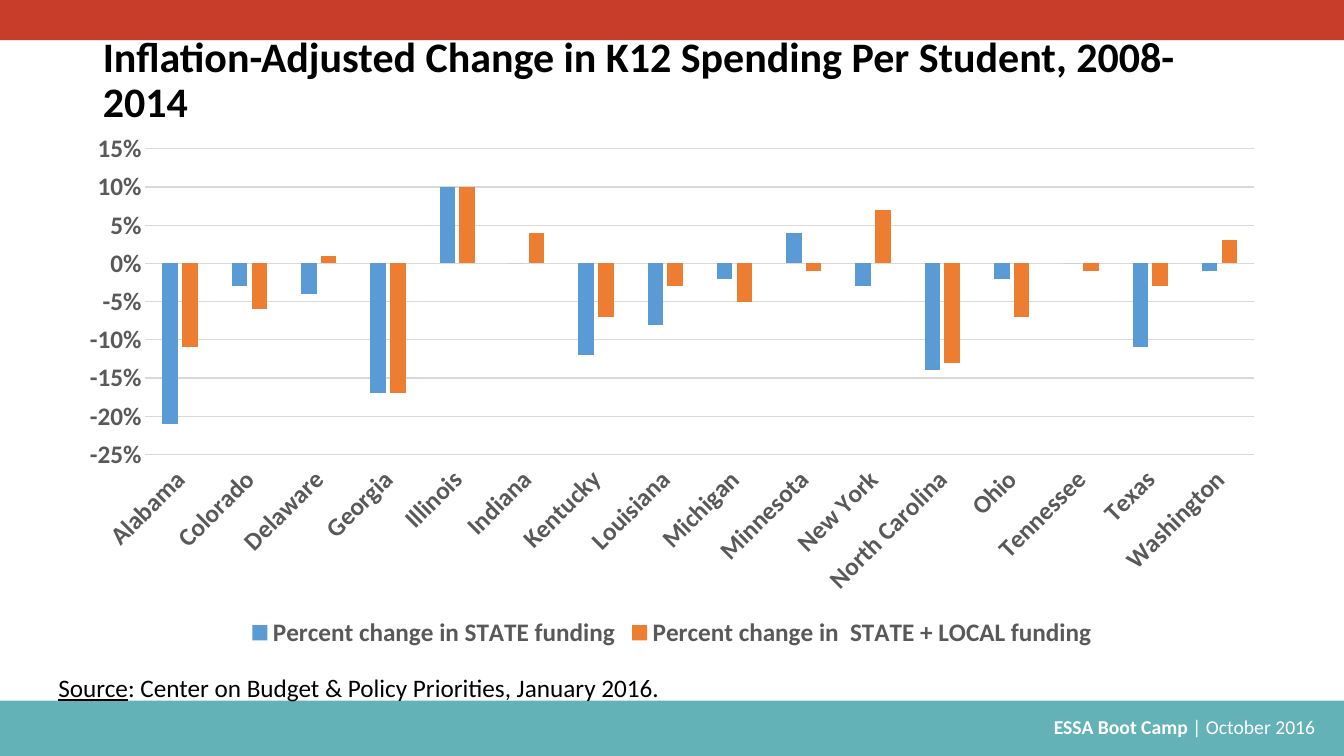
from pptx import Presentation
from pptx.chart.data import CategoryChartData
from pptx.dml.color import RGBColor
from pptx.enum.chart import XL_CHART_TYPE, XL_LEGEND_POSITION, XL_TICK_LABEL_POSITION, XL_TICK_MARK
from pptx.enum.shapes import MSO_SHAPE
from pptx.enum.text import MSO_ANCHOR, MSO_AUTO_SIZE, PP_ALIGN
from pptx.util import Inches, Pt

RED = RGBColor(0xC8, 0x3C, 0x2A)
TEAL = RGBColor(0x63, 0xB2, 0xB8)
BLUE = RGBColor(0x5B, 0x9B, 0xD5)
ORANGE = RGBColor(0xED, 0x7D, 0x31)
GRAY = RGBColor(0x59, 0x59, 0x59)
GRID = RGBColor(0xD9, 0xD9, 0xD9)
BLACK = RGBColor(0, 0, 0)
WHITE = RGBColor(0xFF, 0xFF, 0xFF)

prs = Presentation()
prs.slide_width, prs.slide_height = Inches(13.33), Inches(7.5)
s = prs.slides.add_slide(prs.slide_layouts[5])


def share(x, y, w, h):
    """Turn percentages of the slide's size into lengths."""
    W, H = prs.slide_width, prs.slide_height
    return int(W * x / 100), int(H * y / 100), int(W * w / 100), int(H * h / 100)


def style(font, size, color, bold=None):
    font.name, font.size, font.bold = "Calibri", Pt(size), bold
    font.color.rgb = color


# Bands along the bottom and top edges
for y, h, color in [(92.67, 7.33, TEAL), (0, 5.33, RED)]:
    sp = s.shapes.add_shape(MSO_SHAPE.RECTANGLE, *share(0, y, 100, h))
    sp.shadow.inherit = False
    sp.fill.solid()
    sp.fill.fore_color.rgb = color
    sp.line.fill.background()

# Title
title = s.shapes.title
title.left, title.top, title.width, title.height = share(6.9, 5.33, 86.27, 10.93)
tf = title.text_frame
tf.text = "Inflation-Adjusted Change in K12 Spending Per Student, 2008-2014"
tf.word_wrap, tf.auto_size = True, MSO_AUTO_SIZE.NONE
tf.vertical_anchor = MSO_ANCHOR.MIDDLE
p = tf.paragraphs[0]
p.alignment, p.line_spacing = PP_ALIGN.LEFT, 0.9
style(p.font, 30, BLACK, True)

# Chart data: state, state funding, state + local funding
spending = [
    ("Alabama", -0.21, -0.11), ("Colorado", -0.03, -0.06),
    ("Delaware", -0.04, 0.01), ("Georgia", -0.17, -0.17),
    ("Illinois", 0.1, 0.1), ("Indiana", 0, 0.04),
    ("Kentucky", -0.12, -0.07), ("Louisiana", -0.08, -0.03),
    ("Michigan", -0.02, -0.05), ("Minnesota", 0.04, -0.01),
    ("New York", -0.03, 0.07), ("North Carolina", -0.14, -0.13),
    ("Ohio", -0.02, -0.07), ("Tennessee", 0, -0.01),
    ("Texas", -0.11, -0.03), ("Washington", -0.01, 0.03),
]
states, state_funding, total_funding = zip(*spending)
data = CategoryChartData(number_format="0%")
data.categories = states
data.add_series("Percent change in STATE funding", state_funding)
data.add_series("Percent change in  STATE + LOCAL funding", total_funding)

# Chart
chart = s.shapes.add_chart(
    XL_CHART_TYPE.COLUMN_CLUSTERED, *share(4.88, 16.27, 90.25, 70.13), data).chart
style(chart.font, 10, BLACK)
chart.has_title = False
plot = chart.plots[0]
plot.gap_width, plot.overlap, plot.vary_by_categories = 219, -27, False
for series, color in zip(plot.series, (BLUE, ORANGE)):
    series.invert_if_negative = False
    series.format.fill.solid()
    series.format.fill.fore_color.rgb = color

# Axes
cat_axis, val_axis = chart.category_axis, chart.value_axis
for axis in (cat_axis, val_axis):
    axis.major_tick_mark = axis.minor_tick_mark = XL_TICK_MARK.NONE
    style(axis.tick_labels.font, 18, GRAY, True)
cat_axis.tick_label_position = XL_TICK_LABEL_POSITION.LOW
val_axis.minimum_scale, val_axis.maximum_scale, val_axis.major_unit = -0.25, 0.15, 0.05
val_axis.tick_labels.number_format = "0%"
val_axis.tick_labels.number_format_is_linked = False
val_axis.format.line.fill.background()
for line in (cat_axis.format.line, val_axis.major_gridlines.format.line):
    line.color.rgb, line.width = GRID, Pt(0.75)

# Legend
chart.has_legend = True
chart.legend.position = XL_LEGEND_POSITION.BOTTOM
chart.legend.include_in_layout = False
style(chart.legend.font, 18, GRAY, True)

# Footer and source note: a marked lead, then plain text
notes = [
    ((36, 93.87, 62.93, 4.53), PP_ALIGN.RIGHT, 14, WHITE, True,
     "ESSA Boot Camp ", "| October 2016 "),
    ((3.6, 88.27, 46.74, 5.33), PP_ALIGN.LEFT, 18, BLACK, False,
     "Source", ": Center on Budget & Policy Priorities, January 2016."),
]
for place, align, size, color, wrap, lead, rest in notes:
    tf = s.shapes.add_textbox(*share(*place)).text_frame
    tf.word_wrap = wrap
    p = tf.paragraphs[0]
    p.alignment = align
    style(p.font, size, color)
    r = p.add_run()
    r.text = lead
    if color == WHITE:
        r.font.bold = True
    else:
        r.font.underline = True
    p.add_run().text = rest

prs.save("out.pptx")
